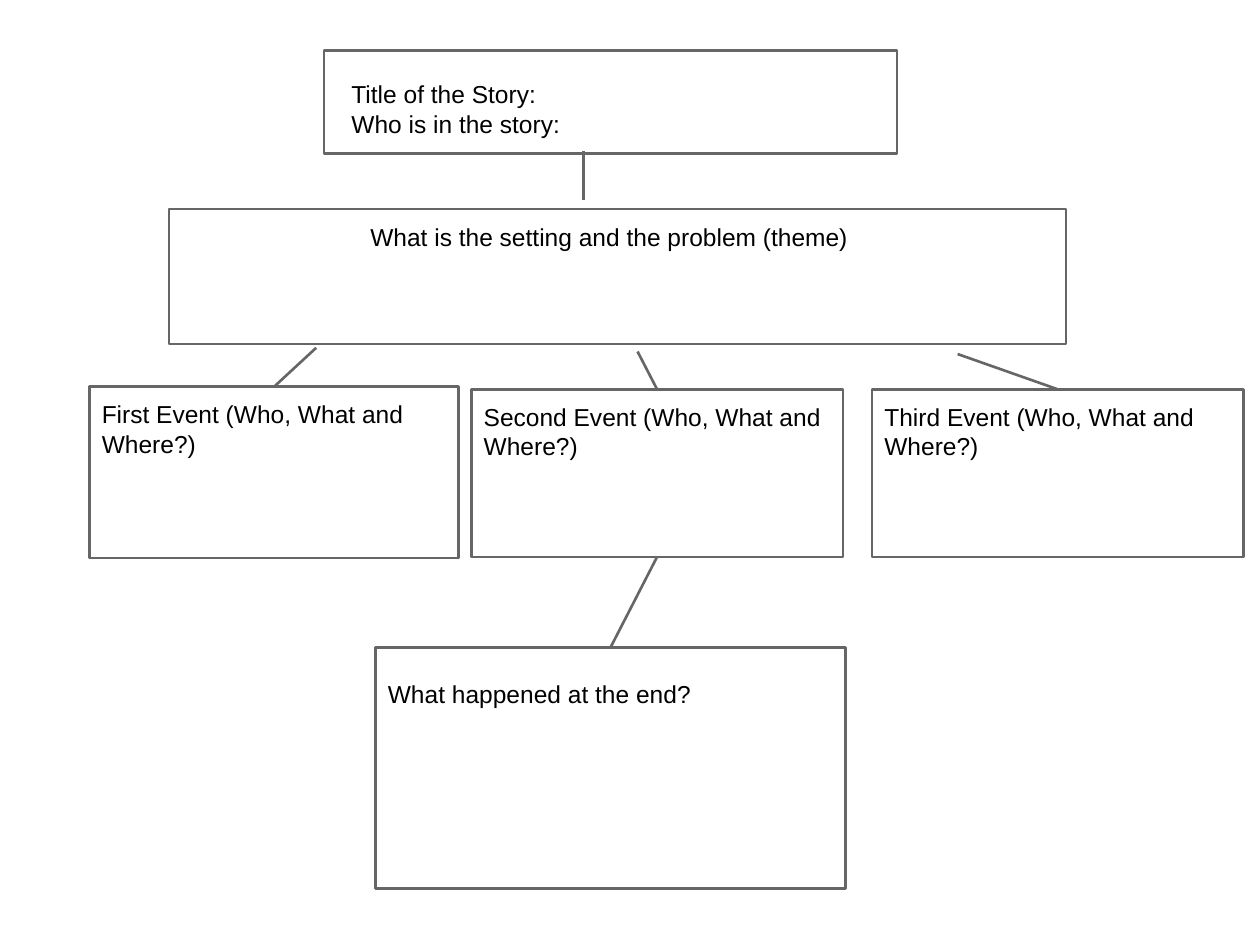
"""Build a story map slide with boxes for title, setting, events and ending."""
from dataclasses import dataclass
from typing import Optional

import pptx
import pptx.dml.color
import pptx.enum.shapes
import pptx.enum.text
import pptx.oxml
import pptx.oxml.ns
import pptx.util
from pptx.util import Inches

GREY = pptx.dml.color.RGBColor(0x66, 0x66, 0x66)
WHITE = pptx.dml.color.RGBColor(0xFF, 0xFF, 0xFF)
BLACK = pptx.dml.color.RGBColor(0x00, 0x00, 0x00)
LINE_WIDTH = pptx.util.Pt(1.5)
TOP, BOTTOM = 0, 2


@dataclass
class Panel:
    left: float
    top: float
    width: float
    height: float
    text: str = ""
    top_inset: float = 0.1


@dataclass
class Link:
    start: tuple[float, float]
    end: tuple[float, float]
    start_box: Optional[str] = None
    end_box: Optional[str] = None


PANELS = {
    "title": Panel(2.57, 0.4, 4.55, 0.82),
    "setting": Panel(1.34, 1.66, 7.12, 1.07),
    "first": Panel(0.71, 3.07, 2.93, 1.36, "First Event (Who, What and Where?)"),
    "second": Panel(3.74, 3.09, 2.95, 1.33, "Second Event (Who, What and Where?)"),
    "third": Panel(6.92, 3.09, 2.95, 1.33, "Third Event (Who, What and Where?)"),
    "ending": Panel(2.98, 5.14, 3.73, 1.91, "What happened at the end?", 0.25),
}
LABELS = [
    Panel(2.69, 0.53, 4.42, 0.69, "Title of the Story:\nWho is in the story:"),
    Panel(2.84, 1.66, 4.12, 0.86, "What is the setting and the problem (theme)"),
]
LINKS = [
    Link((4.63, 1.2), (4.63, 1.59)),
    Link((2.51, 2.76), (2.18, 3.07), end_box="first"),
    Link((5.06, 2.79), (5.22, 3.09), end_box="second"),
    Link((7.6, 2.81), (8.39, 3.09), end_box="third"),
    Link((5.22, 4.42), (4.84, 5.14), start_box="second", end_box="ending"),
]


def write_text(box, panel: Panel) -> None:
    """Fill a box with left-aligned text starting at its top."""
    frame = box.text_frame
    frame.word_wrap = True
    frame.vertical_anchor = pptx.enum.text.MSO_ANCHOR.TOP
    frame.margin_left = frame.margin_right = frame.margin_bottom = Inches(0.1)
    frame.margin_top = Inches(panel.top_inset)
    frame.text = panel.text
    for para in frame.paragraphs:
        para.alignment = pptx.enum.text.PP_ALIGN.LEFT
        for span in para.runs:
            span.font.name = "Arial"
            span.font.size = pptx.util.Pt(14)
            span.font.color.rgb = BLACK


def bounds(panel: Panel) -> list[int]:
    """Return the left, top, width and height of a panel as lengths."""
    return [Inches(side) for side in (panel.left, panel.top, panel.width, panel.height)]


def draw_panel(page, panel: Panel):
    """Draw an outlined rectangle, with its text if it has any."""
    box = page.shapes.add_shape(pptx.enum.shapes.MSO_SHAPE.RECTANGLE, *bounds(panel))
    box.shadow.inherit = False
    box.fill.solid()
    box.fill.fore_color.rgb = WHITE
    box.line.color.rgb = GREY
    box.line.width = LINE_WIDTH
    if panel.text:
        write_text(box, panel)
    return box


def draw_label(page, panel: Panel) -> None:
    """Draw a text box without an outline."""
    write_text(page.shapes.add_textbox(*bounds(panel)), panel)


def draw_link(page, link: Link, boxes: dict) -> None:
    """Draw a line, joined to the boxes it names."""
    ends = [Inches(value) for value in (*link.start, *link.end)]
    connector = page.shapes.add_connector(pptx.enum.shapes.MSO_CONNECTOR.STRAIGHT, *ends)
    connector.line.color.rgb = GREY
    connector.line.width = LINE_WIDTH
    properties = connector._element.spPr
    properties.append(pptx.oxml.parse_xml(f"<a:effectLst {pptx.oxml.ns.nsdecls('a')}/>"))
    if link.start_box:
        connector.begin_connect(boxes[link.start_box], BOTTOM)
    if link.end_box:
        connector.end_connect(boxes[link.end_box], TOP)


def main() -> None:
    """Build and save the deck."""
    deck = pptx.Presentation()
    deck.slide_width, deck.slide_height = Inches(10), Inches(7.5)
    page = deck.slides.add_slide(deck.slide_layouts[6])
    boxes = {name: draw_panel(page, panel) for name, panel in PANELS.items()}
    for label in LABELS:
        draw_label(page, label)
    for link in LINKS:
        draw_link(page, link, boxes)
    deck.save("out.pptx")


if __name__ == "__main__":
    main()
